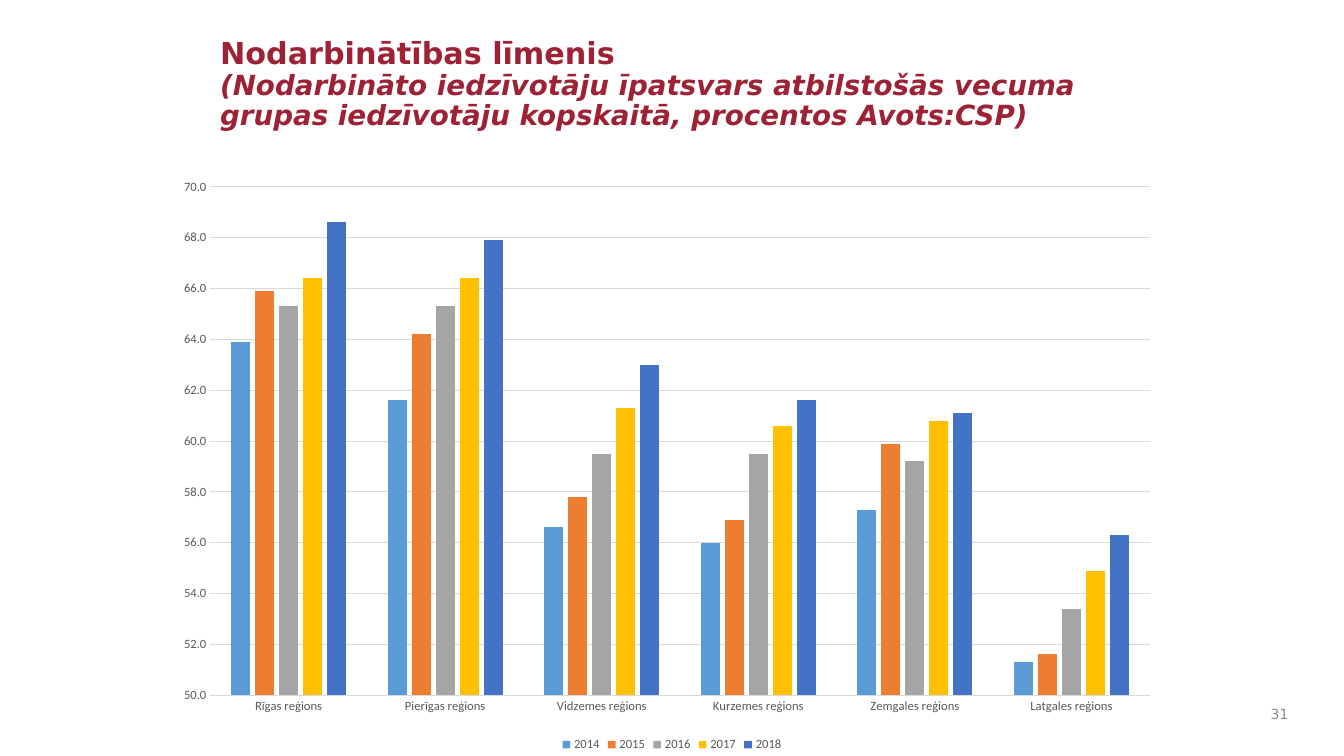
from lxml.etree import SubElement
from pptx import Presentation
from pptx.chart.data import CategoryChartData
from pptx.dml.color import RGBColor
from pptx.enum.chart import XL_CHART_TYPE as ChartType, XL_LEGEND_POSITION as LegendPosition, XL_TICK_MARK as TickMark
from pptx.enum.text import MSO_ANCHOR as Anchor, MSO_AUTO_SIZE as AutoSize, PP_ALIGN as Align
from pptx.oxml import parse_xml
from pptx.oxml.ns import nsdecls, qn
from pptx.util import Pt

COLORS = {
    "white": "FFFFFF",
    "title": "9D2235",
    "number": "8C8C8C",
    "label": "595959",
    "grid": "D9D9D9",
    "2014": "5B9BD5",
    "2015": "ED7D31",
    "2016": "A5A5A5",
    "2017": "FFC000",
    "2018": "4472C4",
}
REGIONS = ["Rīgas", "Pierīgas", "Vidzemes", "Kurzemes", "Zemgales", "Latgales"]
EMPLOYMENT = {
    "2014": [63.9, 61.6, 56.6, 56, 57.3, 51.3],
    "2015": [65.9, 64.2, 57.8, 56.9, 59.9, 51.6],
    "2016": [65.3, 65.3, 59.5, 59.5, 59.2, 53.4],
    "2017": [66.4, 66.4, 61.3, 60.6, 60.8, 54.9],
    "2018": [68.6, 67.9, 63, 61.6, 61.1, 56.3],
}
PLOT_AREA = {"x": 0.042, "y": 0.082, "w": 0.932, "h": 0.82}


def color(name):
    return RGBColor.from_string(COLORS[name])


class SlideBuilder:
    text_font = "DejaVu Sans"
    chart_font = "Calibri"

    def __init__(self, deck):
        self.page = deck.slides.add_slide(deck.slide_layouts[5])

    def style(self, font, name, size, tint):
        font.name = name
        font.size = Pt(size)
        font.color.rgb = color(tint)

    def title(self, heading, subtitle, left, top, width, height):
        box = self.page.shapes.title
        box.left, box.top, box.width, box.height = map(Pt, (left, top, width, height))
        box.fill.solid()
        box.fill.fore_color.rgb = color("white")
        frame = box.text_frame
        frame.text = f"{heading}\v{subtitle}"
        frame.word_wrap = True
        frame.auto_size = AutoSize.NONE
        frame.vertical_anchor = Anchor.TOP
        para = frame.paragraphs[0]
        para.alignment = Align.LEFT
        para.line_spacing = 0.9
        for span, size, italic in zip(para.runs, (21.6, 19.8), (False, True)):
            self.style(span.font, self.text_font, size, "title")
            span.font.bold = True
            span.font.italic = italic
        line_break = frame._txBody.find(".//" + qn("a:br"))
        SubElement(line_break, qn("a:rPr"), sz="2160")

    def page_number(self, number, left, top, width, height):
        box = self.page.shapes.add_textbox(*map(Pt, (left, top, width, height)))
        frame = box.text_frame
        frame.text = number
        frame.word_wrap = True
        frame.vertical_anchor = Anchor.MIDDLE
        para = frame.paragraphs[0]
        para.alignment = Align.RIGHT
        self.style(para.runs[0].font, self.text_font, 10, "number")

    def grid_line(self, line):
        line.color.rgb = color("grid")
        line.width = Pt(0.75)

    def column_chart(self, categories, series, left, top, width, height):
        data = CategoryChartData(number_format="0.0")
        data.categories = categories
        for name, values in series.items():
            data.add_series(name, values)
        chart = self.page.shapes.add_chart(
            ChartType.COLUMN_CLUSTERED, *map(Pt, (left, top, width, height)), data
        ).chart
        chart.has_title = False
        chart.font.name = self.chart_font
        chart.font.size = Pt(10)

        plot = chart.plots[0]
        plot.vary_by_categories = False
        plot.gap_width = 219
        plot.overlap = -27
        for bars in plot.series:
            bars.format.fill.solid()
            bars.format.fill.fore_color.rgb = color(bars.name)

        for axis in (chart.category_axis, chart.value_axis):
            axis.major_tick_mark = axis.minor_tick_mark = TickMark.NONE
            self.style(axis.tick_labels.font, self.chart_font, 9, "label")
        self.grid_line(chart.category_axis.format.line)
        value_axis = chart.value_axis
        value_axis.minimum_scale = 50
        value_axis.maximum_scale = 70
        value_axis.major_unit = 2
        value_axis.tick_labels.number_format = "0.0"
        value_axis.tick_labels.number_format_is_linked = False
        value_axis.format.line.fill.background()
        self.grid_line(value_axis.major_gridlines.format.line)

        chart.has_legend = True
        chart.legend.position = LegendPosition.BOTTOM
        chart.legend.include_in_layout = False
        self.style(chart.legend.font, self.chart_font, 9, "label")
        self.place_plot(chart)

    def place_plot(self, chart):
        plot_area = chart._chartSpace.chart.plotArea
        for layout in plot_area.findall(qn("c:layout")):
            plot_area.remove(layout)
        modes = "".join(f'<c:{side}Mode val="edge"/>' for side in "xy")
        sizes = "".join(f'<c:{side} val="{share}"/>' for side, share in PLOT_AREA.items())
        plot_area.insert(0, parse_xml(
            f'<c:layout {nsdecls("c")}><c:manualLayout><c:layoutTarget val="inner"/>'
            f"{modes}{sizes}</c:manualLayout></c:layout>"
        ))


def main():
    deck = Presentation()
    deck.slide_width, deck.slide_height = Pt(960), Pt(540)
    slide = SlideBuilder(deck)
    slide.page_number("31", 895.7, 498.2, 31.7, 23.8)
    slide.title(
        "Nodarbinātības līmenis",
        "(Nodarbināto iedzīvotāju īpatsvars atbilstošās vecuma grupas "
        "iedzīvotāju kopskaitā, procentos Avots:CSP)",
        150, 24, 654.5, 82.8,
    )
    slide.column_chart(
        [f"{region} reģions" for region in REGIONS], EMPLOYMENT, 120, 97.2, 720, 442.8
    )
    deck.save("out.pptx")


if __name__ == "__main__":
    main()
